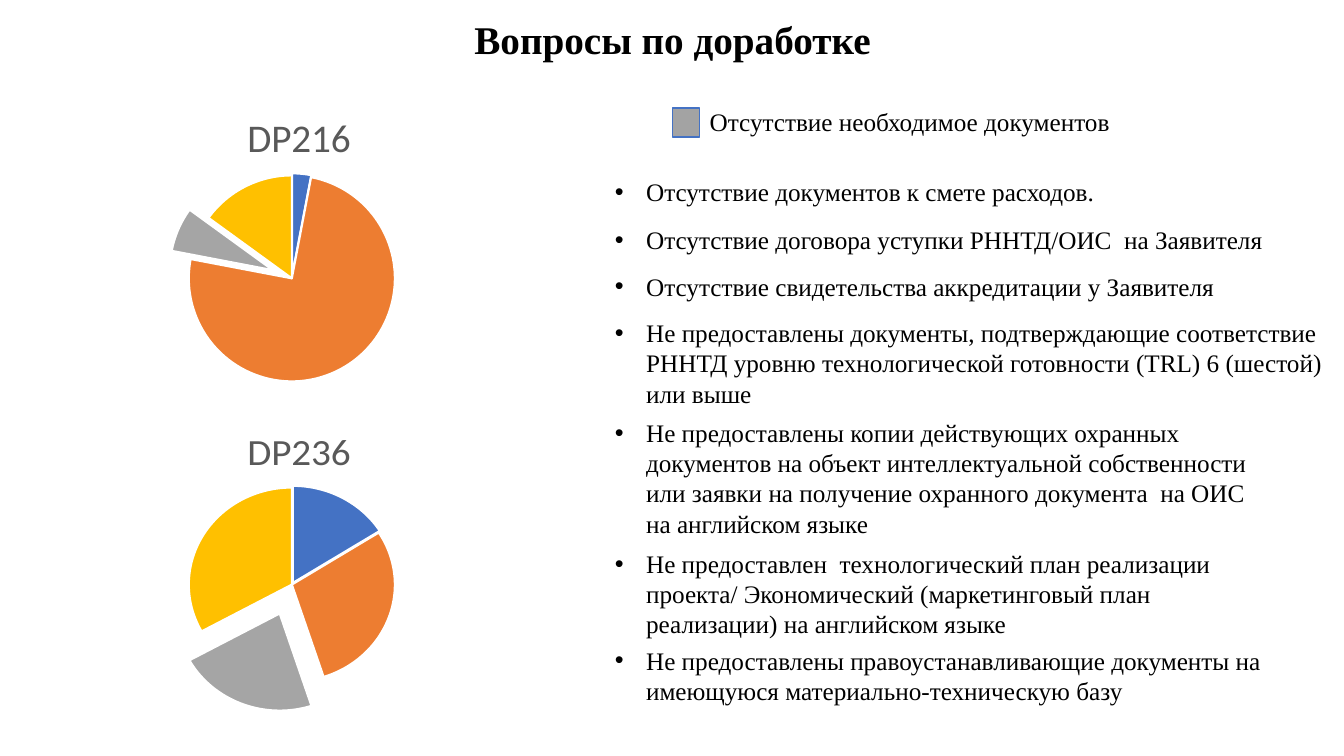
from dataclasses import dataclass

from lxml import etree
from pptx import Presentation
from pptx.chart.data import CategoryChartData
from pptx.dml.color import RGBColor
from pptx.enum.chart import XL_CHART_TYPE
from pptx.enum.shapes import MSO_SHAPE
from pptx.enum.text import MSO_ANCHOR, MSO_AUTO_SIZE, PP_ALIGN
from pptx.oxml import parse_xml
from pptx.oxml.ns import nsdecls, qn
from pptx.util import Inches, Pt

PIE = XL_CHART_TYPE.PIE
RECT = MSO_SHAPE.RECTANGLE
TOP = MSO_ANCHOR.TOP
FIXED = MSO_AUTO_SIZE.NONE
LEFT, CENTER = PP_ALIGN.LEFT, PP_ALIGN.CENTER

# Content
TITLE = "Вопросы по доработке"
KEY = "Отсутствие необходимое документов"
# name, values, pull of the grey slice in percent of the radius
PIES = [
    ("DP216", (3, 75, 7, 15), 20),
    ("DP236", (16, 29, 22, 33), 32),
]
# top, width, height, text
ISSUES = [
    (1.7, 6.67, 0.4, "Отсутствие документов к смете расходов."),
    (2.18, 7.08, 0.4, "Отсутствие договора уступки РННТД/ОИС  на Заявителя"),
    (2.64, 7.28, 0.4, "Отсутствие свидетельства аккредитации у Заявителя"),
    (3.1, 7.39, 1.01, "Не предоставлены документы, подтверждающие соответствие "
     "РННТД уровню технологической готовности (TRL) 6 (шестой) или выше"),
    (4.09, 6.74, 1.31, "Не предоставлены копии действующих охранных документов "
     "на объект интеллектуальной собственности или заявки на получение "
     "охранного документа  на ОИС на английском языке"),
    (5.39, 6.74, 1.01, "Не предоставлен  технологический план реализации "
     "проекта/ Экономический (маркетинговый план реализации) "
     "на английском языке"),
    (6.35, 6.74, 0.71, "Не предоставлены правоустанавливающие документы "
     "на имеющуюся материально-техническую базу"),
]


@dataclass(frozen=True)
class Theme:
    serif: str = "Times New Roman"
    sans: str = "Calibri"
    ink: str = "000000"
    soft: str = "595959"
    edge: str = "FFFFFF"
    key: str = "A3A3A3"
    slices: tuple = ("4472C4", "ED7D31", "A5A5A5", "FFC000")
    head: int = 28
    body: int = 18
    small: int = 10


T = Theme()


def rgb(code):
    return RGBColor.from_string(code)


def style(font, face, size, color, bold=False):
    font.name, font.size, font.bold = face, Pt(size), bold
    font.color.rgb = rgb(color)


def write(box, text, size=T.body, bold=False, align=LEFT, bullet=False):
    """Put one formatted paragraph in a shape."""
    frame = box.text_frame
    frame.word_wrap = True
    frame.auto_size = FIXED
    frame.vertical_anchor = TOP
    para = frame.paragraphs[0]
    para.alignment = align
    run = para.add_run()
    run.text = text
    style(run.font, T.serif, size, T.ink, bold)
    if bullet:
        props = para._p.get_or_add_pPr()
        props.set("marL", str(Inches(0.31)))
        props.set("indent", str(-Inches(0.31)))
        face = etree.SubElement(props, qn("a:buFont"))
        face.set("typeface", "Arial")
        etree.SubElement(props, qn("a:buChar")).set("char", "•")


def layout(inner=False, **spots):
    """Make a manual chart layout from fractions of the chart."""
    parts = '<c:layoutTarget val="inner"/>' if inner else ""
    parts += "".join(f'<c:{k}Mode val="edge"/>' for k in ("x", "y"))
    parts += "".join(f'<c:{k} val="{v}"/>' for k, v in spots.items())
    return parse_xml(f'<c:layout {nsdecls("c")}><c:manualLayout>{parts}'
                     '</c:manualLayout></c:layout>')


def place(owner, node, after=None):
    """Swap in a layout, as first child or after the named one."""
    for old in owner.findall(qn("c:layout")):
        owner.remove(old)
    spot = 0 if after is None else owner.index(owner.find(qn(after))) + 1
    owner.insert(spot, node)


def add_pie(slide, top, name, vals, pull):
    data = CategoryChartData()
    data.categories = [str(n + 1) for n in range(len(vals))]
    data.add_series("Series 1", vals)
    chart = slide.shapes.add_chart(PIE, Inches(1.07), Inches(top),
                                   Inches(3.65), Inches(3.1), data).chart
    style(chart.font, T.sans, T.small, T.ink)
    chart.has_legend = False

    # Heading
    chart.has_title = True
    para = chart.chart_title.text_frame.paragraphs[0]
    run = para.add_run()
    run.text = name
    style(run.font, T.sans, T.head, T.soft)
    place(chart.chart_title._element, layout(x=0.36, y=0.07), "c:tx")

    # Slices
    plot = chart.plots[0]
    plot.vary_by_categories = True
    area = plot._element.getparent()
    place(area, layout(True, x=0.22, y=0.3, w=0.56, h=0.66))
    row = plot.series[0]
    for n, color in enumerate(T.slices):
        form = row.points[n].format
        form.fill.solid()
        form.fill.fore_color.rgb = rgb(color)
        form.line.color.rgb = rgb(T.edge)
        form.line.width = Pt(1.5)
    for n, far in ((0, 2), (2, pull)):
        dot = row._element.findall(qn("c:dPt"))[n]
        push = parse_xml(f'<c:explosion {nsdecls("c")} val="{far}"/>')
        dot.insert(dot.index(dot.find(qn("c:spPr"))), push)


def main():
    deck = Presentation()
    deck.slide_width, deck.slide_height = Inches(13.33), Inches(7.5)
    slide = deck.slides.add_slide(deck.slide_layouts[5])
    shapes = slide.shapes

    # Title
    title = shapes.title
    title.left, title.top = Inches(3.46), Inches(0.1)
    title.width, title.height = Inches(6.42), Inches(0.57)
    write(title, TITLE, size=T.head, bold=True, align=CENTER)

    # Pies
    for n, pie in enumerate(PIES):
        add_pie(slide, 0.81 + 3.15 * n, *pie)

    # Colour key
    mark = shapes.add_shape(RECT, Inches(6.67), Inches(1.07),
                            Inches(0.27), Inches(0.29))
    mark.shadow.inherit = False
    mark.fill.solid()
    mark.fill.fore_color.rgb = rgb(T.key)
    mark.line.color.rgb = rgb(T.slices[0])
    mark.line.width = Pt(1)
    write(shapes.add_textbox(Inches(6.94), Inches(1.01),
                             Inches(4.49), Inches(0.4)), KEY)

    # Issues
    for top, wide, high, text in ISSUES:
        box = shapes.add_textbox(Inches(6), Inches(top),
                                 Inches(wide), Inches(high))
        write(box, text, bullet=True)

    deck.save("out.pptx")


if __name__ == "__main__":
    main()
